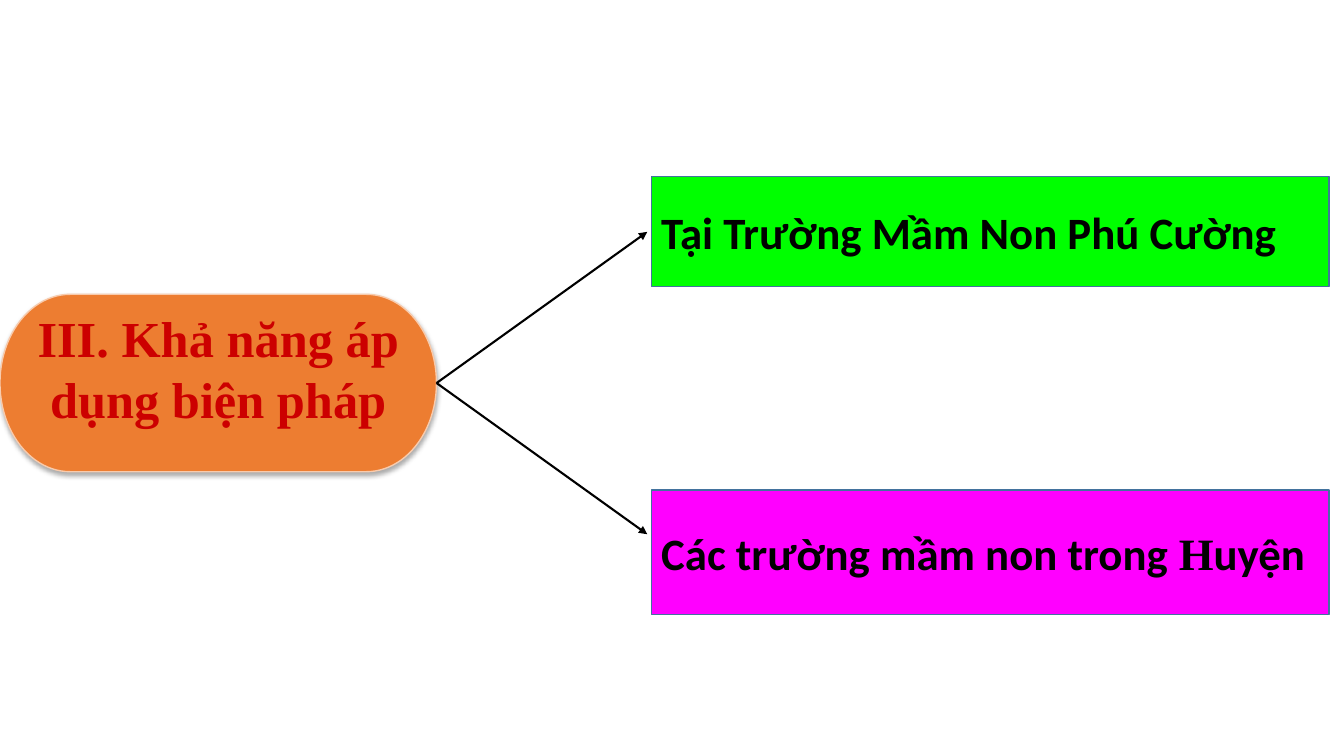
from lxml import etree
from pptx import Presentation
from pptx.dml.color import RGBColor
from pptx.enum.shapes import MSO_CONNECTOR, MSO_SHAPE
from pptx.enum.text import MSO_ANCHOR, PP_ALIGN
from pptx.oxml.ns import qn
from pptx.util import Inches, Pt

TERMINATOR = MSO_SHAPE.FLOWCHART_TERMINATOR
RECTANGLE = MSO_SHAPE.RECTANGLE
STRAIGHT = MSO_CONNECTOR.STRAIGHT
MIDDLE = MSO_ANCHOR.MIDDLE
CENTER = PP_ALIGN.CENTER
JUSTIFY = PP_ALIGN.JUSTIFY
SANS = "Calibri"
SERIF = "Times New Roman"


def color(value):
    return RGBColor.from_string(value)


def add_box(page, kind, place, fill, border, spans, size, ink, align):
    box = page.shapes.add_shape(kind, *map(Inches, place))
    box.shadow.inherit = False
    box.fill.solid()
    box.fill.fore_color.rgb = color(fill)
    box.line.color.rgb = color(border)
    box.line.width = Pt(1)
    frame = box.text_frame
    frame.word_wrap = True
    frame.vertical_anchor = MIDDLE
    para = frame.paragraphs[0]
    para.alignment = align
    for text, font in spans:
        span = para.add_run()
        span.text = text
        span.font.name = font
        span.font.size = Pt(size)
        span.font.bold = True
        span.font.color.rgb = color(ink)
    return box


def add_shadow(box):
    effects = box._element.spPr.find(qn("a:effectLst"))
    shadow = etree.SubElement(
        effects, qn("a:outerShdw"), blurRad=str(Pt(3.5)), dist=str(Pt(2.2)),
        dir="5400000", algn="ctr", rotWithShape="0")
    tint = etree.SubElement(shadow, qn("a:srgbClr"), val="000000")
    etree.SubElement(tint, qn("a:alpha"), val="32000")


def add_arrow(page, start, end):
    arrow = page.shapes.add_connector(STRAIGHT, *map(Inches, start + end))
    arrow.line.color.rgb = color("000000")
    arrow.line.width = Pt(1.5)
    etree.SubElement(arrow.line._get_or_add_ln(), qn("a:tailEnd"), type="triangle")
    etree.SubElement(arrow._element.spPr, qn("a:effectLst"))


def main():
    deck = Presentation()
    deck.slide_width = Inches(13.33)
    deck.slide_height = Inches(7.5)
    page = deck.slides.add_slide(deck.slide_layouts[6])

    topic = add_box(page, TERMINATOR, (0, 2.92, 4.33, 1.76), "ED7D31", "F8CBAD",
                    [("III. Khả năng áp dụng biện pháp", SERIF)], 36, "CC0000", CENTER)
    topic.text_frame.margin_bottom = Inches(0.35)
    add_shadow(topic)

    branches = [
        (1.75, 1.09, 2.3, "00FF00", [("Tại Trường Mầm Non Phú Cường", SANS)]),
        (4.86, 1.24, 5.3, "FF00FF",
         [("Các trường mầm non trong ", SANS), ("H", SERIF), ("uyện", SANS)]),
    ]
    for top, height, arrow_end, fill, spans in branches:
        add_arrow(page, (4.33, 3.8), (6.42, arrow_end))
        add_box(page, RECTANGLE, (6.46, top, 6.72, height), fill, "43739E",
                spans, 32, "000000", JUSTIFY)

    deck.save("out.pptx")


if __name__ == "__main__":
    main()
